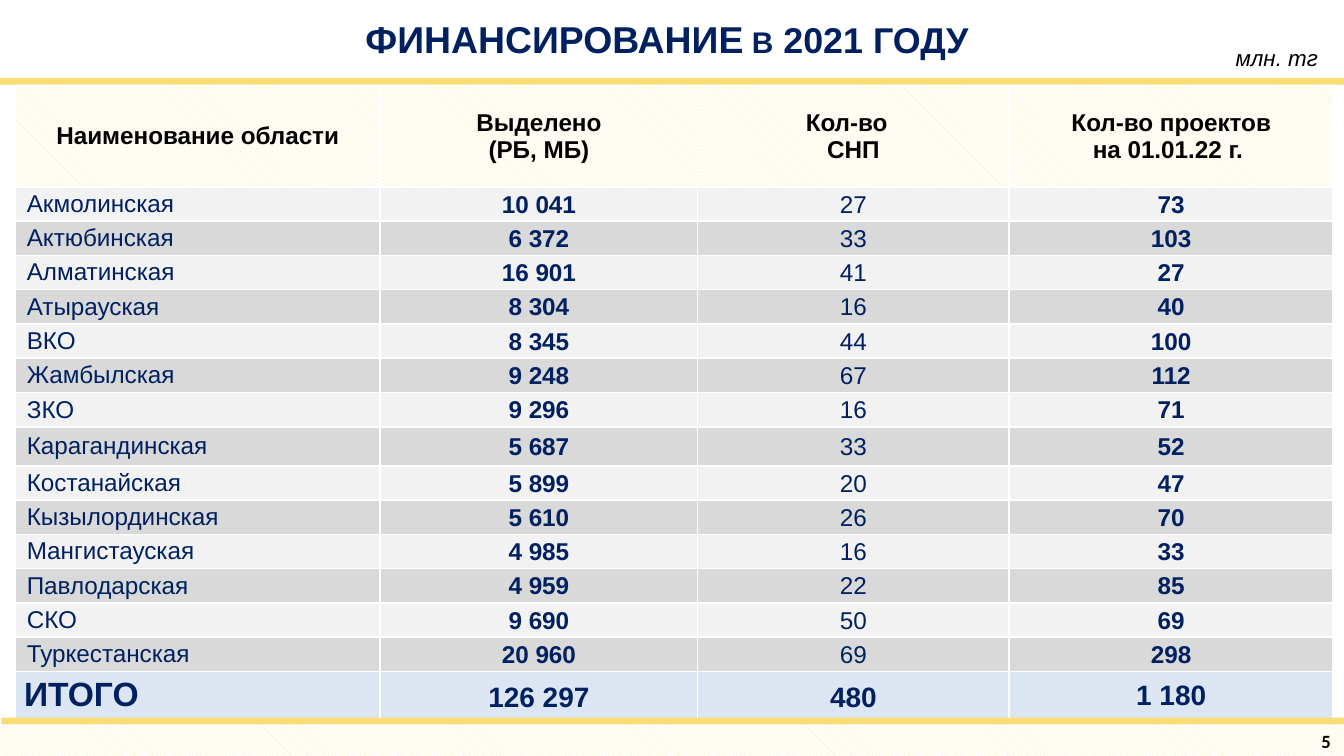
from copy import deepcopy
from dataclasses import dataclass

from lxml.etree import SubElement
from pptx import Presentation
from pptx.dml.color import RGBColor
from pptx.enum.dml import MSO_PATTERN
from pptx.enum.shapes import MSO_SHAPE
from pptx.enum.text import MSO_ANCHOR, PP_ALIGN
from pptx.oxml.ns import qn
from pptx.util import Inches, Pt


@dataclass(frozen=True)
class Theme:
    font: str = "Arial"
    number_font: str = "Calibri"
    navy: str = "002060"
    black: str = "000000"
    white: str = "FFFFFF"
    gold: str = "FBDD76"
    hatch: str = "FDE8A4"
    odd_row: str = "F2F2F2"
    even_row: str = "D9D9D9"
    total_row: str = "DCE6F2"
    title_size: int = 20
    year_size: int = 24
    unit_size: int = 12
    body_size: int = 13
    total_size: int = 15
    total_label_size: int = 18
    number_size: int = 10


THEME = Theme()

# \v breaks a line, \n starts a paragraph
HEADERS = [
    "Наименование области",
    "Выделено\v (РБ, МБ) ",
    "Кол-во  \vСНП",
    "Кол-во проектов\nна 01.01.22 г. ",
]
REGIONS = [
    ("Акмолинская", "10 041", "27", "73"),
    ("Актюбинская", "6 372", "33", "103"),
    ("Алматинская", "16 901", "41", "27"),
    ("Атырауская", "8 304", "16", "40"),
    ("ВКО", "8 345", "44", "100"),
    ("Жамбылская", "9 248", "67", "112"),
    ("ЗКО", "9 296", "16", "71"),
    ("Карагандинская", "5 687", "33", "52"),
    ("Костанайская", "5 899", "20", "47"),
    ("Кызылординская", "5 610", "26", "70"),
    ("Мангистауская", "4 985", "16", "33"),
    ("Павлодарская", "4 959", "22", "85"),
    ("СКО", "9 690", "50", "69"),
    ("Туркестанская", "20 960", "69", "298"),
]
TOTAL = (" ИТОГО", "126 297", "480", "1 180")
COLUMN_WIDTHS = [2.72, 2.36, 2.32, 2.41]
TABLE_HEIGHT = 4.71
HEADER_HEIGHT, TALL_HEIGHT, TOTAL_HEIGHT = 0.75, 0.29, 0.35
TALL_REGION = "Карагандинская"


def style_run(run, size, color=THEME.navy, name=THEME.font, **extra):
    formats = {"size": Pt(size), "name": name, **extra}
    for attribute, value in formats.items():
        setattr(run.font, attribute, value)
    run.font.color.rgb = RGBColor.from_string(color)


def paint(fill, color):
    fill.solid()
    fill.fore_color.rgb = RGBColor.from_string(color)


def hatch(fill):
    fill.patterned()
    fill.pattern = MSO_PATTERN.LIGHT_DOWNWARD_DIAGONAL
    fill.fore_color.rgb = RGBColor.from_string(THEME.hatch)
    fill.back_color.rgb = RGBColor.from_string(THEME.white)


def add_bar(slide, left, top, width, height):
    bar = slide.shapes.add_shape(MSO_SHAPE.RECTANGLE, Inches(left), Inches(top),
                                 Inches(width), Inches(height))
    bar.shadow.inherit = False
    bar.line.fill.background()
    paint(bar.fill, THEME.gold)
    return bar


def add_label(slide, left, top, width, height, wrap=True):
    frame = slide.shapes.add_textbox(Inches(left), Inches(top), Inches(width),
                                     Inches(height)).text_frame
    frame.word_wrap = wrap
    frame.paragraphs[0].alignment = PP_ALIGN.CENTER
    return frame


def add_borders(cell):
    properties = cell._tc.get_or_add_tcPr()
    for position, side in enumerate(("lnL", "lnR", "lnT", "lnB")):
        border = SubElement(properties, qn(f"a:{side}"), w=str(Pt(1)))
        color = SubElement(SubElement(border, qn("a:solidFill")), qn("a:srgbClr"))
        color.set("val", THEME.white)
        properties.insert(position, border)


def fill_cell(cell, text, size, color=THEME.navy, bold=True, align=PP_ALIGN.CENTER,
              indent=0, inset=0):
    layout = {
        "vertical_anchor": MSO_ANCHOR.MIDDLE,
        "margin_left": Inches(inset),
        "margin_right": Inches(inset),
        "margin_top": Inches(inset),
        "margin_bottom": 0,
        "text": text,
    }
    for attribute, value in layout.items():
        setattr(cell, attribute, value)
    for paragraph in cell.text_frame.paragraphs:
        paragraph.alignment = align
        if indent:
            paragraph._p.get_or_add_pPr().set("indent", str(Inches(indent)))
        for run in paragraph.runs:
            style_run(run, size, color, bold=bold)
        # Line breaks take the size of the text around them
        for line_break in paragraph._p.findall(qn("a:br")):
            line_break.append(deepcopy(paragraph.runs[0]._r.get_or_add_rPr()))
    add_borders(cell)


def add_funding_table(slide):
    row_count = len(REGIONS) + 2
    table = slide.shapes.add_table(row_count, len(HEADERS), Inches(0.11), Inches(0.64),
                                   Inches(sum(COLUMN_WIDTHS)), Inches(TABLE_HEIGHT)).table
    for column, width in zip(table.columns, COLUMN_WIDTHS):
        column.width = Inches(width)

    # Regular rows share the height left by the three special ones
    regular = (TABLE_HEIGHT - HEADER_HEIGHT - TALL_HEIGHT - TOTAL_HEIGHT) / (len(REGIONS) - 1)
    region_heights = [TALL_HEIGHT if region[0] == TALL_REGION else regular for region in REGIONS]
    for row, height in zip(table.rows, [HEADER_HEIGHT, *region_heights, TOTAL_HEIGHT]):
        row.height = Inches(height)

    # Header
    for column, heading in enumerate(HEADERS):
        cell = table.cell(0, column)
        fill_cell(cell, heading, THEME.body_size, THEME.black)
        hatch(cell.fill)

    # Regions
    for row, region in enumerate(REGIONS, start=1):
        for column, value in enumerate(region):
            cell = table.cell(row, column)
            if column == 0:
                fill_cell(cell, value, THEME.body_size, bold=False, align=PP_ALIGN.LEFT,
                          indent=0.09)
            else:
                fill_cell(cell, value, THEME.body_size, bold=column != 2, inset=0.01)
            paint(cell.fill, THEME.odd_row if row % 2 else THEME.even_row)

    # Total
    for column, value in enumerate(TOTAL):
        cell = table.cell(row_count - 1, column)
        if column == 0:
            fill_cell(cell, value, THEME.total_label_size, align=PP_ALIGN.LEFT)
        else:
            fill_cell(cell, value, THEME.total_size, inset=0.01 if column == 3 else 0.04)
        paint(cell.fill, THEME.total_row)


def add_title(slide):
    title = add_label(slide, 0, -0.02, 10, 0.57)
    title.vertical_anchor = MSO_ANCHOR.MIDDLE
    parts = [("ФИНАНСИРОВАНИЕ в", THEME.title_size), (" 2021 году ", THEME.year_size)]
    for text, size in parts:
        run = title.paragraphs[0].add_run()
        run.text = text
        style_run(run, size, bold=True)
        run._r.get_or_add_rPr().set("cap", "small")


def add_unit(slide):
    unit = add_label(slide, 9.09, 0.28, 0.82, 0.3, wrap=False).paragraphs[0].add_run()
    unit.text = "млн. тг"
    style_run(unit, THEME.unit_size, THEME.black, italic=True)


def add_footer(slide):
    footer = add_bar(slide, -0.01, 5.4, 10.01, 0.23)
    hatch(footer.fill)
    footer.text_frame.vertical_anchor = MSO_ANCHOR.MIDDLE
    paragraph = footer.text_frame.paragraphs[0]
    paragraph.alignment = PP_ALIGN.RIGHT
    page_number = paragraph.add_run()
    page_number.text = "5"
    style_run(page_number, THEME.number_size, THEME.black, THEME.number_font, bold=True)


def main():
    deck = Presentation()
    deck.slide_width = Inches(10)
    deck.slide_height = deck.slide_width * 9 // 16
    slide = deck.slides.add_slide(deck.slide_layouts[6])
    add_funding_table(slide)
    add_title(slide)
    add_unit(slide)
    add_footer(slide)
    # Gold rules above and below the table
    add_bar(slide, 0, 0.58, 10, 0.05)
    add_bar(slide, 0.01, 5.34, 10, 0.05)
    deck.save("out.pptx")


if __name__ == "__main__":
    main()
